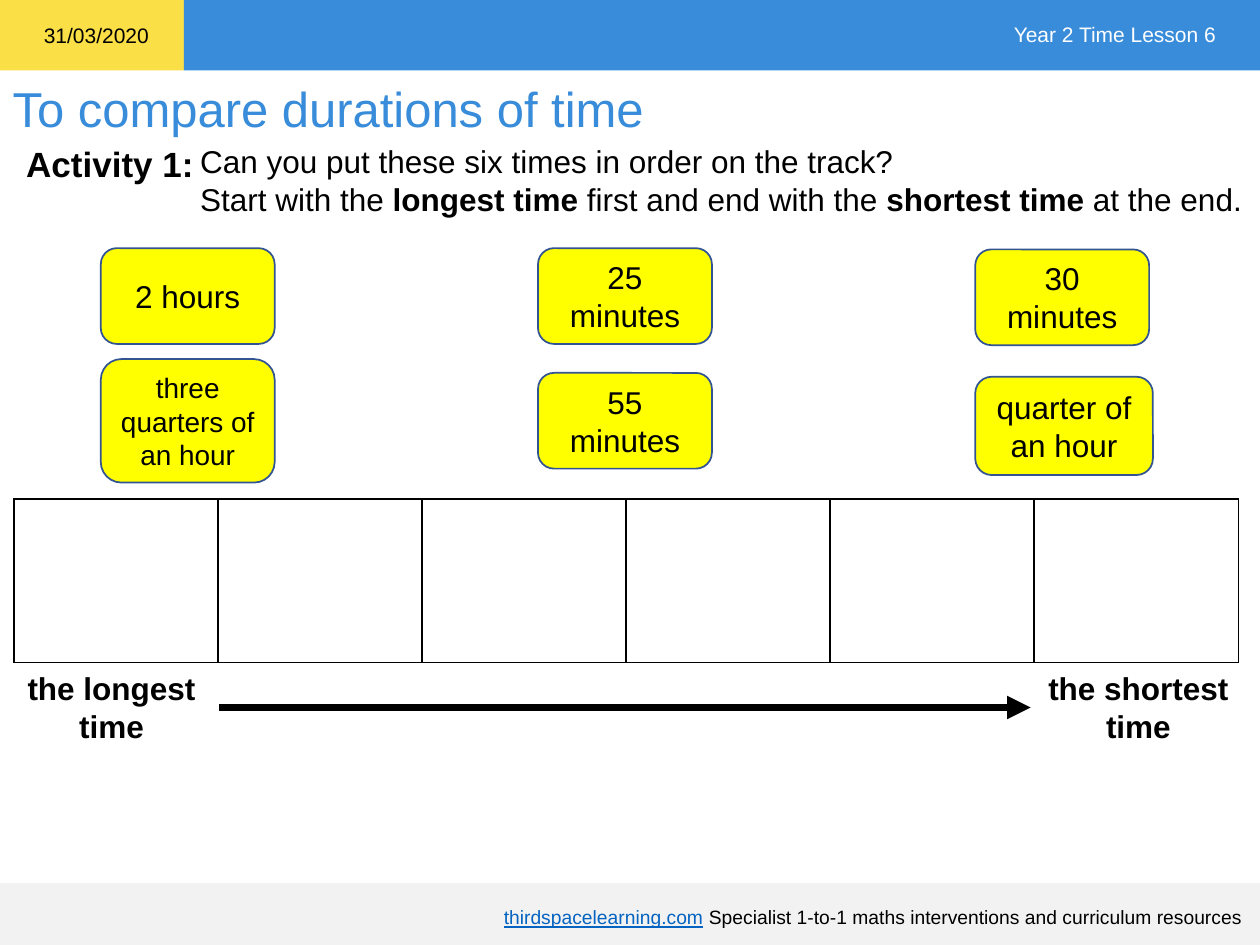
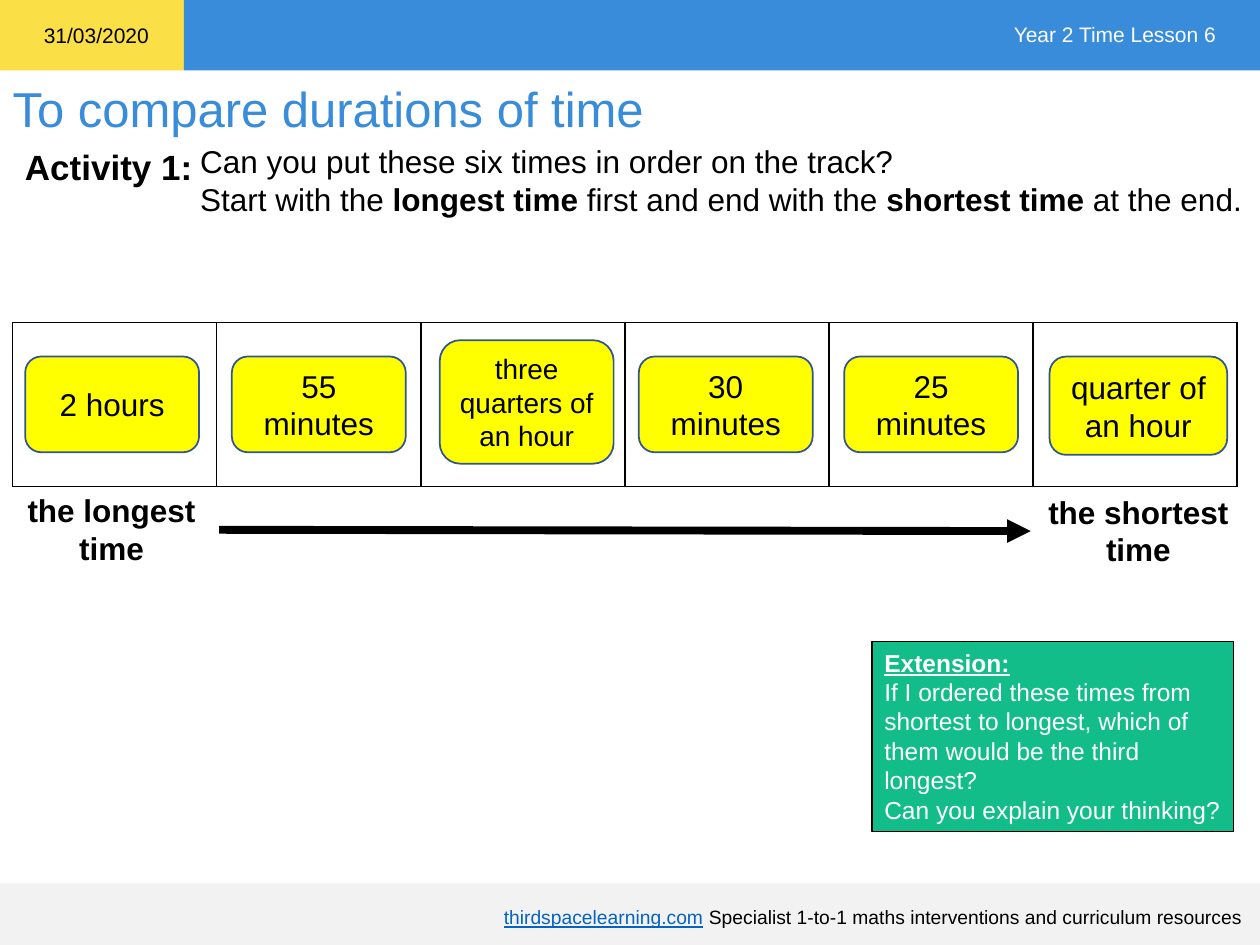
from dataclasses import dataclass

from lxml.etree import SubElement
from pptx import Presentation
from pptx.dml.color import RGBColor
from pptx.enum.shapes import MSO_CONNECTOR, MSO_SHAPE
from pptx.enum.text import MSO_ANCHOR, MSO_AUTO_SIZE, PP_ALIGN
from pptx.oxml.ns import qn
from pptx.util import Inches, Pt

FONT = "Arial"
COLORS = {
    "blue": "388CDA",
    "gold": "FADF47",
    "grey": "F2F2F2",
    "link": "0563C1",
    "card": "FFFF00",
    "edge": "325491",
    "green": "13BD8A",
    "black": "000000",
    "white": "FFFFFF",
}


@dataclass(frozen=True)
class Box:
    left: float
    top: float
    width: float
    height: float

    def emu(self) -> tuple:
        return tuple(Inches(n) for n in (self.left, self.top, self.width, self.height))


@dataclass(frozen=True)
class Card:
    text: str
    width: float = 1.38
    height: float = 0.76
    size: int = 18


@dataclass(frozen=True)
class Page:
    task: Box
    track: Box
    ends: tuple  # tops of the two end labels
    spots: tuple  # left and top of each card


CARDS = (
    Card("2 hours"),
    Card("25 minutes"),
    Card("30 minutes"),
    Card("three quarters of an hour", height=0.98, size=16),
    Card("55 minutes"),
    Card("quarter of an hour", width=1.41, height=0.78),
)
GRID = [0.8 + 3.47 * col for col in range(3)]
PAGES = (
    Page(Box(0.11, 1.06, 1.53, 0.56), Box(0.11, 3.96, 9.72, 1.3), (5.26, 5.26),
         tuple(zip(GRID * 2, (1.97, 1.97, 1.98, 2.85, 2.96, 2.99)))),
    Page(Box(0.1, 1.08, 1.53, 0.56), Box(0.1, 2.56, 9.72, 1.3), (3.85, 3.86),
         ((0.2, 2.83), (6.7, 2.83), (5.07, 2.83),
          (3.49, 2.7), (1.84, 2.83), (8.33, 2.83))),
)
GUIDE = ("Can you put these six times in order on the track?\n"
         "Start with the *longest time *first and end with the *shortest time *at the end.")
BONUS = ("*Extension:\n"
         "If I ordered these times from shortest to longest, which of them "
         "would be the third longest?\n"
         "Can you explain your thinking?")


def rgb(name: str) -> RGBColor:
    return RGBColor.from_string(COLORS[name])


def write(frame, text: str, size: int, color: str = "black",
          align=PP_ALIGN.LEFT, wrap: bool = True, anchor=MSO_ANCHOR.TOP) -> None:
    """Fill a frame; text after each odd asterisk is bold."""
    frame.auto_size = MSO_AUTO_SIZE.NONE
    frame.word_wrap = wrap
    frame.vertical_anchor = anchor
    frame.text = text.replace("*", "")
    for para, line in zip(frame.paragraphs, text.split("\n")):
        para.alignment = align
        if "*" in line:
            para.text = ""
            for i, part in enumerate(line.split("*")):
                if part:
                    run = para.add_run()
                    run.text = part
                    run.font.bold = i % 2 == 1
        for run in para.runs:
            run.font.name = FONT
            run.font.size = Pt(size)
            run.font.color.rgb = rgb(color)


def label(slide, box: Box, text: str, size: int, **style):
    shape = slide.shapes.add_textbox(*box.emu())
    write(shape.text_frame, text, size, **style)
    return shape


def block(slide, box: Box, fill: str, edge: str = "", weight: float = 1,
          kind=MSO_SHAPE.RECTANGLE):
    shape = slide.shapes.add_shape(kind, *box.emu())
    shape.shadow.inherit = False
    shape.fill.solid()
    shape.fill.fore_color.rgb = rgb(fill)
    if edge:
        shape.line.color.rgb = rgb(edge)
        shape.line.width = Pt(weight)
    else:
        shape.line.fill.background()
    return shape


def frame_page(slide) -> None:
    # Bands
    block(slide, Box(0, 0, 1.46, 0.56), "gold")
    block(slide, Box(1.46, 0, 8.54, 0.56), "blue")
    block(slide, Box(0, 7.01, 10, 0.49), "grey")

    # Title, date and lesson
    title = slide.shapes.title
    title.left, title.top, title.width, title.height = Box(0, 0.57, 9.77, 0.57).emu()
    write(title.text_frame, "To compare durations of time", 28, "blue")
    label(slide, Box(0.25, 0.13, 1.04, 0.3), "31/03/2020", 12, wrap=False)
    label(slide, Box(7.93, 0.12, 1.82, 0.3), "Year 2 Time Lesson 6", 12,
          color="white", align=PP_ALIGN.RIGHT, wrap=False)

    # Footer
    foot = label(slide, Box(0.42, 7.13, 9.54, 0.3), "thirdspacelearning.com", 11,
                 align=PP_ALIGN.RIGHT, color="link", anchor=MSO_ANCHOR.MIDDLE)
    para = foot.text_frame.paragraphs[0]
    para.runs[0].font.underline = True
    rest = para.add_run()
    rest.text = " Specialist 1-to-1 maths interventions and curriculum resources"
    rest.font.name = FONT
    rest.font.size = Pt(11)
    rest.font.color.rgb = rgb("black")


def add_track(slide, box: Box) -> None:
    table = slide.shapes.add_table(1, len(CARDS), *box.emu()).table
    table.first_row = table.horz_banding = False
    for cell in table.iter_cells():
        props = cell._tc.get_or_add_tcPr()
        for side in ("a:lnL", "a:lnR", "a:lnT", "a:lnB"):
            line = SubElement(props, qn(side), w=str(Pt(1)))
            SubElement(SubElement(line, qn("a:solidFill")), qn("a:srgbClr"),
                       val=COLORS["black"])
        cell.fill.solid()
        cell.fill.fore_color.rgb = rgb("white")


def add_arrow(slide, tops: tuple) -> None:
    first, last = (
        label(slide, Box(left, top, 1.71, 0.71), text, 18, align=PP_ALIGN.CENTER)
        for left, top, text in zip((0.03, 8.18), tops,
                                   ("*the longest time", "*the shortest time")))
    arrow = slide.shapes.add_connector(MSO_CONNECTOR.STRAIGHT, 0, 0, 0, 0)
    arrow.begin_connect(first, 3)
    arrow.end_connect(last, 1)
    arrow.line.color.rgb = rgb("black")
    arrow.line.width = Pt(4.5)
    SubElement(arrow.line._get_or_add_ln(), qn("a:tailEnd"), type="triangle")
    SubElement(arrow._element.spPr, qn("a:effectLst"))


def add_cards(slide, spots: tuple) -> None:
    for card, (left, top) in zip(CARDS, spots):
        shape = block(slide, Box(left, top, card.width, card.height), "card", "edge",
                      kind=MSO_SHAPE.ROUNDED_RECTANGLE)
        write(shape.text_frame, card.text, card.size, align=PP_ALIGN.CENTER,
              anchor=MSO_ANCHOR.MIDDLE)


def add_page(deck, page: Page):
    slide = deck.slides.add_slide(deck.slide_layouts[5])
    frame_page(slide)
    task = label(slide, page.task, "*Activity 1:", 20, wrap=False)
    task.text_frame.paragraphs[0].line_spacing = 1.07
    label(slide, Box(1.49, 1.08, 8.52, 0.71), GUIDE, 18)
    add_track(slide, page.track)
    add_arrow(slide, page.ends)
    add_cards(slide, page.spots)
    return slide


def main() -> None:
    deck = Presentation()
    deck.slide_width, deck.slide_height = Inches(10), Inches(7.5)
    for page in PAGES:
        slide = add_page(deck, page)

    # Extension on the answer slide
    note = block(slide, Box(6.92, 5.09, 2.87, 1.51), "green", "black", 0.75)
    write(note.text_frame, BONUS, 14, "white")
    note.text_frame.paragraphs[0].runs[0].font.underline = True
    deck.save("out.pptx")


if __name__ == "__main__":
    main()
